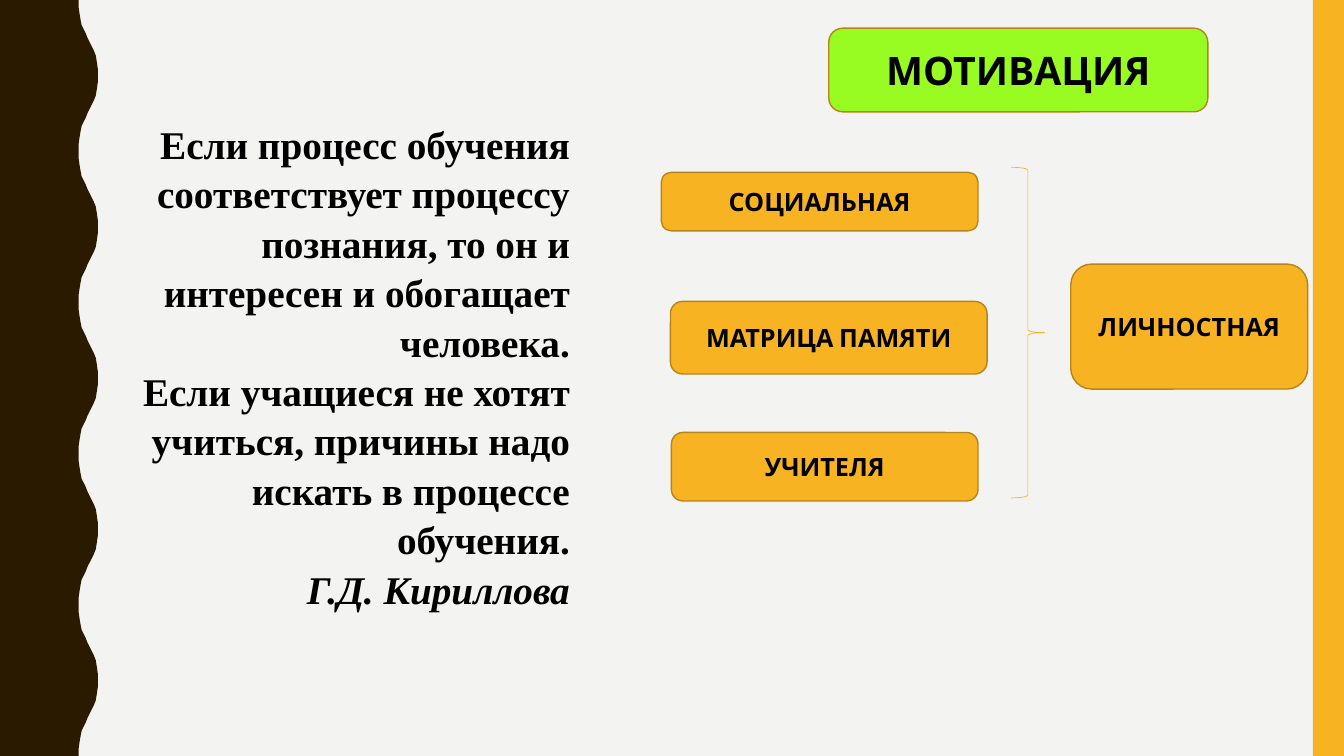
"""Build the slide about motivation in learning."""
import pptx
import pptx.dml.color
import pptx.enum.shapes
import pptx.enum.text
import pptx.util

Inches = pptx.util.Inches
SHAPES = pptx.enum.shapes.MSO_SHAPE
ALIGN = pptx.enum.text.PP_ALIGN

THEME = {
    "background": "F3F3F2", "wave": "2A1A00", "accent": "F8B323",
    "heading": "98FB21", "outline": "B7841A", "text": "000000",
    "label_font": "Cabin", "quote_font": "Times New Roman",
    "large": 28, "small": 18,
}
QUOTE = [
    ("Если процесс обучения соответствует процессу познания, "
     "то он и интересен и обогащает человека.", False),
    ("Если учащиеся не хотят учиться, причины надо искать в процессе обучения.", False),
    ("Г.Д. Кириллова", True),
]
QUOTE_BOX = (1.17, 1.12, 4.58, 4.81)
BOXES = [
    ("МОТИВАЦИЯ", (8.22, 0.28, 3.76, 0.83), "heading", "large"),
    ("СОЦИАЛЬНАЯ", (6.56, 1.71, 3.14, 0.58), "accent", "small"),
    ("МАТРИЦА ПАМЯТИ", (6.65, 2.99, 3.14, 0.72), "accent", "small"),
    ("УЧИТЕЛЯ", (6.66, 4.29, 3.04, 0.68), "accent", "small"),
    ("ЛИЧНОСТНАЯ", (10.62, 2.62, 2.35, 1.24), "accent", "small"),
]
BRACE_BOX = (10.03, 1.66, 0.33, 3.28)
STRIPE_BOX = (13.02, 0, 0.31, 7.5)
WAVE_PERIOD, WAVE_COUNT = 1.5, 5
HALF_WAVE = [
    (0.78, 0), (0.78, 0.07), (0.79, 0.14), (0.8, 0.2), (0.81, 0.25),
    (0.83, 0.29), (0.85, 0.33), (0.87, 0.38), (0.89, 0.42), (0.91, 0.46),
    (0.93, 0.5), (0.95, 0.55), (0.96, 0.61), (0.97, 0.68), (0.97, 0.75),
]


def color(name):
    """Return a theme colour."""
    return pptx.dml.color.RGBColor.from_string(THEME[name])


def style(shape, fill=None, line=None, width=1):
    """Set the fill and outline of a shape and remove its shadow."""
    shape.shadow.inherit = False
    if fill:
        shape.fill.solid()
        shape.fill.fore_color.rgb = color(fill)
    else:
        shape.fill.background()
    if line:
        shape.line.color.rgb = color(line)
        shape.line.width = pptx.util.Pt(width)
    else:
        shape.line.fill.background()


def add_shape(slide, kind, box, **look):
    """Add a styled preset shape."""
    shape = slide.shapes.add_shape(kind, *map(Inches, box))
    style(shape, **look)
    return shape


def write(paragraph, text, font, size, align, italic=False, spacing=1.0):
    """Write bold text into a paragraph."""
    paragraph.alignment = align
    paragraph.line_spacing = spacing
    run = paragraph.add_run()
    run.text = text
    run.font.name = THEME[font]
    run.font.size = pptx.util.Pt(THEME[size])
    run.font.bold = True
    run.font.italic = italic
    run.font.color.rgb = color("text")


def add_wave(slide):
    """Add the dark band with a wavy right edge."""
    mirrored = [(x, WAVE_PERIOD - y) for x, y in HALF_WAVE[-2::-1]]
    edge = [(x, y + WAVE_PERIOD * index)
            for index in range(WAVE_COUNT) for x, y in HALF_WAVE + mirrored]
    points = edge + [(0, WAVE_PERIOD * WAVE_COUNT)]
    builder = slide.shapes.build_freeform(0, 0)
    builder.add_line_segments([(Inches(x), Inches(y)) for x, y in points], close=True)
    style(builder.convert_to_shape(), fill="wave")


def add_quote(slide):
    """Add the right-aligned quotation."""
    frame = slide.shapes.add_textbox(*map(Inches, QUOTE_BOX)).text_frame
    frame.word_wrap = True
    for index, (text, italic) in enumerate(QUOTE):
        paragraph = frame.add_paragraph() if index else frame.paragraphs[0]
        write(paragraph, text, "quote_font", "large", ALIGN.RIGHT,
              italic=italic, spacing=1.05)


def main():
    """Assemble and save the presentation."""
    presentation = pptx.Presentation()
    presentation.slide_width = Inches(13.33)
    presentation.slide_height = Inches(7.5)
    slide = presentation.slides.add_slide(presentation.slide_layouts[6])
    slide.background.fill.solid()
    slide.background.fill.fore_color.rgb = color("background")

    add_wave(slide)
    add_shape(slide, SHAPES.RECTANGLE, STRIPE_BOX, fill="accent")
    for text, box, fill, size in BOXES:
        shape = add_shape(slide, SHAPES.ROUNDED_RECTANGLE, box, fill=fill, line="outline")
        shape.text_frame.vertical_anchor = pptx.enum.text.MSO_ANCHOR.MIDDLE
        write(shape.text_frame.paragraphs[0], text, "label_font", size, ALIGN.CENTER)
    add_shape(slide, SHAPES.RIGHT_BRACE, BRACE_BOX, line="accent", width=0.5)
    add_quote(slide)
    presentation.save("out.pptx")


if __name__ == "__main__":
    main()
